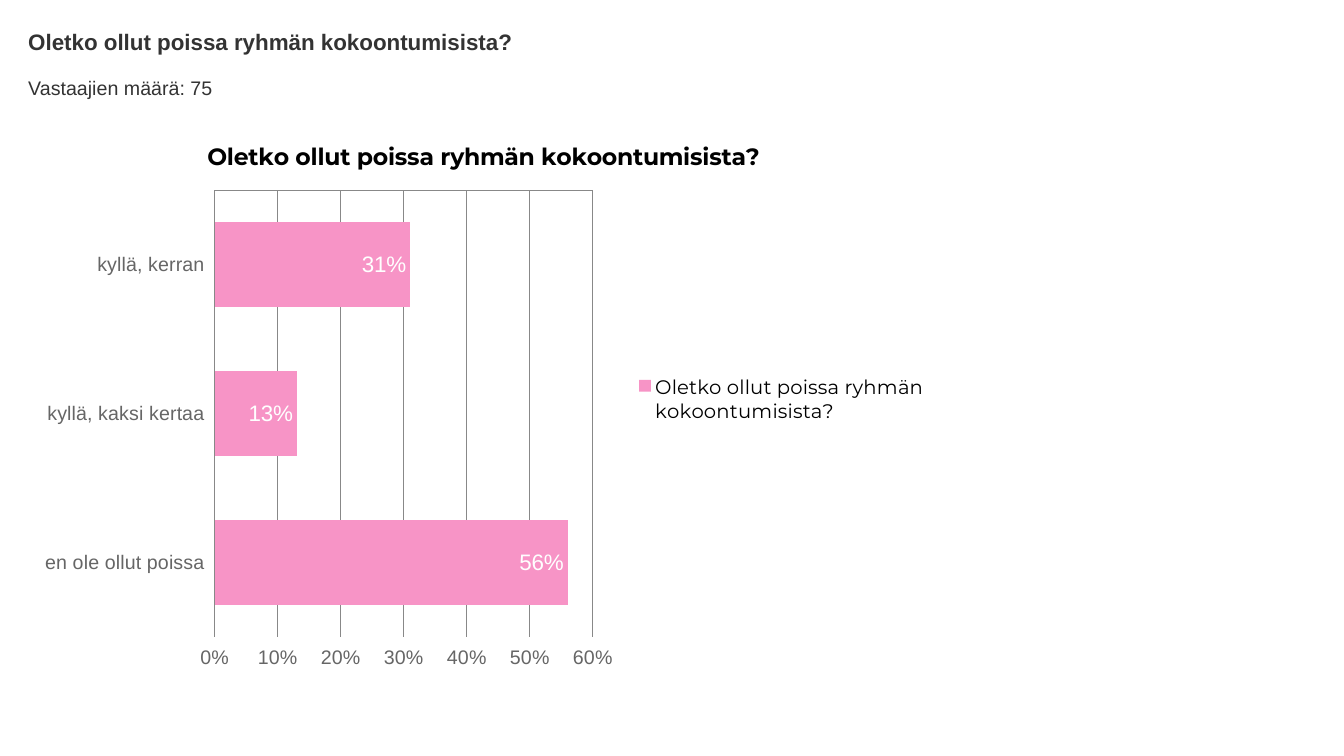
from lxml import etree
from pptx import Presentation
from pptx.chart.data import CategoryChartData
from pptx.dml.color import RGBColor
from pptx.enum.chart import XL_CHART_TYPE as ChartType
from pptx.enum.chart import XL_LABEL_POSITION as LabelPos
from pptx.enum.chart import XL_LEGEND_POSITION as LegendPos
from pptx.enum.chart import XL_TICK_LABEL_POSITION as TickLabelPos
from pptx.enum.chart import XL_TICK_MARK as TickMark
from pptx.enum.text import MSO_ANCHOR, PP_ALIGN
from pptx.oxml.ns import qn
from pptx.util import Inches, Pt

QUESTION = "Oletko ollut poissa ryhmän kokoontumisista?"
RESPONDENTS = "Vastaajien määrä: 75"
ANSWERS = [
    ("kyllä, kerran", 0.31),
    ("kyllä, kaksi kertaa", 0.13),
    ("en ole ollut poissa", 0.56),
]
COLORS = {
    "text": "333333",
    "axis_text": "666666",
    "line": "888888",
    "bar": "F794C6",
    "black": "000000",
    "white": "FFFFFF",
}
LEFT, TEXT_WIDTH = 0.28, 12.78
CHART_BOX = (LEFT, 1.19, 9.03, 5.56)
PLOT_BOX = (2.13, 1.89, 3.75, 4.43)


def color(name):
    return RGBColor.from_string(COLORS[name])


def style_font(font, size, name="Arial", fill="text", bold=False):
    font.size = Pt(size)
    font.name = name
    font.bold = bold
    font.color.rgb = color(fill)


def write_text(sp, text, top, height, **fmt):
    sp.left, sp.top = Inches(LEFT), Inches(top)
    sp.width, sp.height = Inches(TEXT_WIDTH), Inches(height)
    tf = sp.text_frame
    tf.word_wrap = True
    tf.vertical_anchor = MSO_ANCHOR.TOP
    tf.margin_left = tf.margin_right = tf.margin_top = tf.margin_bottom = 0
    p = tf.paragraphs[0]
    p.alignment = PP_ALIGN.LEFT
    r = p.add_run()
    r.text = text
    style_font(r.font, **fmt)


def style_line(line):
    line.color.rgb = color("line")
    line.width = Pt(0.75)


def style_axis(axis, label_position):
    axis.major_tick_mark = axis.minor_tick_mark = TickMark.NONE
    axis.tick_label_position = label_position
    style_font(axis.tick_labels.font, 14, fill="axis_text")
    style_line(axis.format.line)


def place_plot(chart):
    plot_area = chart.plots[0]._element.getparent()
    for old in plot_area.findall(qn("c:layout")):
        plot_area.remove(old)
    layout = etree.Element(qn("c:layout"))
    manual = etree.SubElement(layout, qn("c:manualLayout"))
    x, y, w, h = PLOT_BOX
    left, top, width, height = CHART_BOX
    settings = {
        "layoutTarget": "inner",
        "xMode": "edge",
        "yMode": "edge",
        "x": round((x - left) / width, 4),
        "y": round((y - top) / height, 4),
        "w": round(w / width, 4),
        "h": round(h / height, 4),
    }
    for tag, value in settings.items():
        etree.SubElement(manual, qn("c:" + tag)).set("val", str(value))
    plot_area.insert(0, layout)


def add_answer_chart(s):
    data = CategoryChartData(number_format="0%")
    data.categories = [answer for answer, share in ANSWERS]
    data.add_series(QUESTION, [share for answer, share in ANSWERS])
    box = [Inches(v) for v in CHART_BOX]
    chart = s.shapes.add_chart(ChartType.BAR_CLUSTERED, *box, data).chart
    style_font(chart.font, 14, "Montserrat", "black")

    chart.has_title = True
    r = chart.chart_title.text_frame.paragraphs[0].add_run()
    r.text = QUESTION
    style_font(r.font, 16.8, "Montserrat", "black", bold=True)
    chart.chart_title.include_in_layout = False

    chart.has_legend = True
    chart.legend.position = LegendPos.RIGHT
    chart.legend.include_in_layout = False
    style_font(chart.legend.font, 14, "Montserrat", "black")

    style_axis(chart.category_axis, TickLabelPos.LOW)
    chart.category_axis.reverse_order = True
    value_axis = chart.value_axis
    style_axis(value_axis, TickLabelPos.HIGH)
    value_axis.minimum_scale = 0
    value_axis.maximum_scale = 0.6
    value_axis.major_unit = 0.1
    value_axis.tick_labels.number_format = "0%"
    value_axis.tick_labels.number_format_is_linked = False
    value_axis.has_major_gridlines = True
    style_line(value_axis.major_gridlines.format.line)

    plot = chart.plots[0]
    plot.vary_by_categories = False
    plot.gap_width = 75
    plot.overlap = 40
    fill = plot.series[0].format.fill
    fill.solid()
    fill.fore_color.rgb = color("bar")
    labels = plot.series[0].data_labels
    labels.show_value = True
    labels.position = LabelPos.INSIDE_END
    labels.number_format = "0%"
    labels.number_format_is_linked = False
    style_font(labels.font, 16, fill="white")
    place_plot(chart)


def main():
    prs = Presentation()
    prs.slide_width, prs.slide_height = Inches(13.33), Inches(7.5)
    s = prs.slides.add_slide(prs.slide_layouts[5])
    write_text(s.shapes.title, QUESTION, 0.28, 0.27, size=16, bold=True)
    respondents = s.shapes.add_textbox(0, 0, 0, 0)
    write_text(respondents, RESPONDENTS, 0.75, 0.23, size=14)
    add_answer_chart(s)
    prs.save("out.pptx")


if __name__ == "__main__":
    main()
